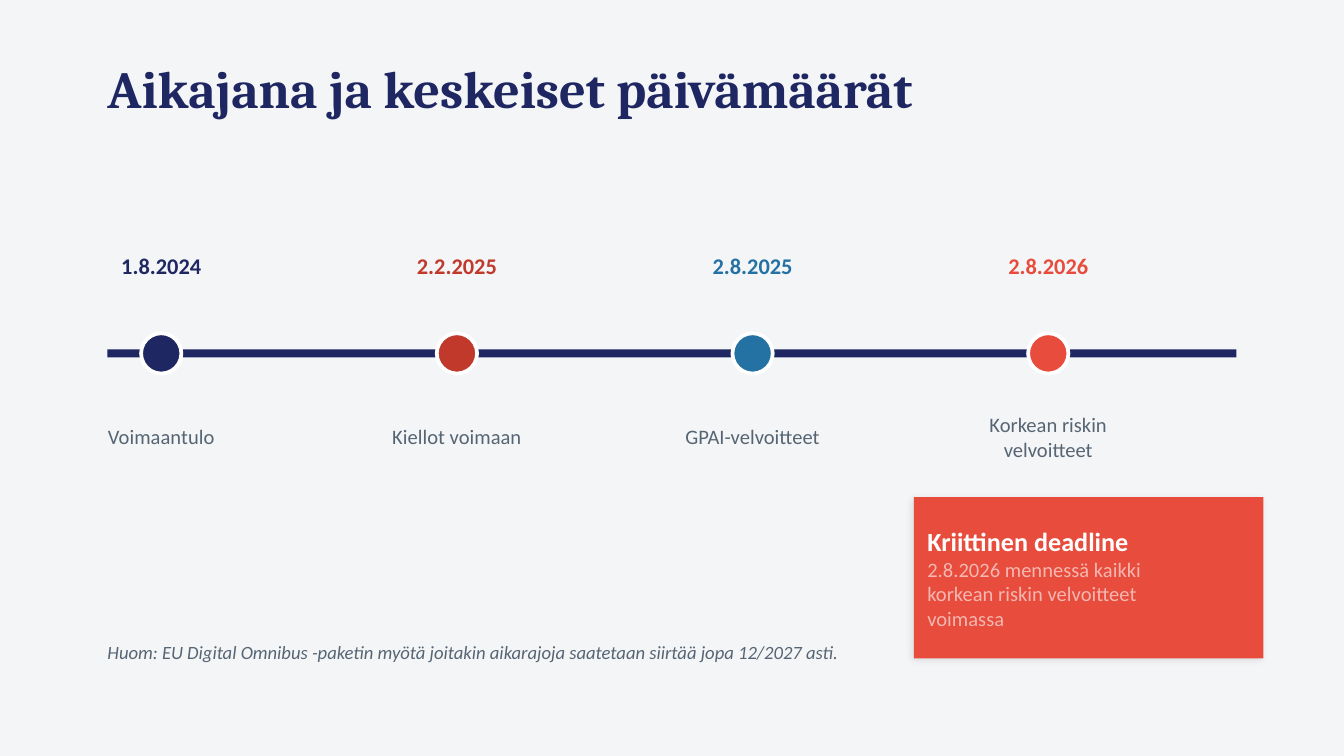
from pptx import Presentation
from pptx.dml.color import RGBColor
from pptx.enum.shapes import MSO_SHAPE
from pptx.enum.text import MSO_ANCHOR, PP_ALIGN
from pptx.oxml import parse_xml
from pptx.oxml.ns import nsdecls
from pptx.util import Inches, Pt

TITLE = "Aikajana ja keskeiset päivämäärät"
MILESTONES = [
    ("1.8.2024", ["Voimaantulo"], "navy"),
    ("2.2.2025", ["Kiellot voimaan"], "crimson"),
    ("2.8.2025", ["GPAI-velvoitteet"], "blue"),
    ("2.8.2026", ["Korkean riskin", "velvoitteet"], "red"),
]
DEADLINE_HEADING = "Kriittinen deadline"
DEADLINE_LINES = ["2.8.2026 mennessä kaikki", "korkean riskin velvoitteet", "voimassa"]
NOTE = ("Huom: EU Digital Omnibus -paketin myötä joitakin aikarajoja "
        "saatetaan siirtää jopa 12/2027 asti.")

THEME = {
    "colors": {
        "background": "F4F5F7", "navy": "1E2761", "crimson": "C0392B", "blue": "2471A3",
        "red": "E74C3C", "gray": "566573", "pink": "F5B7B1", "white": "FFFFFF",
    },
    # font, size, bold, italic
    "styles": {
        "title": ("Cambria", 28, True, False),
        "date": ("Calibri", 12, True, False),
        "body": ("Calibri", 11, False, False),
        "heading": ("Calibri", 14, True, False),
        "note": ("Calibri", 10, False, True),
    },
}

MARGIN = 0.8
FIRST_CENTER, STEP = 1.2, 2.2
LINE_TOP, LINE_HEIGHT = 2.6, 0.06
DOT = 0.3
LABEL_WIDTH = 1.4
CARD = (6.8, 3.7, 2.6, 1.2)
CARD_PADDING = 0.1


def color(name):
    return RGBColor.from_string(THEME["colors"][name])


def add_text(slide, box, lines, align=PP_ALIGN.LEFT):
    """Write one paragraph for each (text, style, color) line."""
    frame = slide.shapes.add_textbox(*map(Inches, box)).text_frame
    frame.word_wrap = True
    frame.vertical_anchor = MSO_ANCHOR.MIDDLE
    frame.margin_left = frame.margin_top = frame.margin_right = frame.margin_bottom = 0
    for index, (text, style, color_name) in enumerate(lines):
        paragraph = frame.paragraphs[0] if index == 0 else frame.add_paragraph()
        paragraph.alignment = align
        run = paragraph.add_run()
        run.text = text
        font = run.font
        font.name, size, font.bold, font.italic = THEME["styles"][style]
        font.size = Pt(size)
        font.color.rgb = color(color_name)


def add_filled(slide, kind, box, fill):
    shape = slide.shapes.add_shape(kind, *map(Inches, box))
    shape.shadow.inherit = False
    shape.fill.solid()
    shape.fill.fore_color.rgb = color(fill)
    shape.line.fill.background()
    return shape


def add_soft_shadow(shape):
    effects = shape._element.spPr.find(
        "{http://schemas.openxmlformats.org/drawingml/2006/main}effectLst")
    effects.append(parse_xml(
        f'<a:outerShdw {nsdecls("a")} blurRad="{Pt(4)}" dist="{Pt(1.5)}" '
        f'dir="{135 * 60000}" algn="bl" rotWithShape="0">'
        '<a:srgbClr val="000000"><a:alpha val="10000"/></a:srgbClr></a:outerShdw>'))


def add_milestone(slide, center, date, label_lines, accent):
    dot_top = LINE_TOP + LINE_HEIGHT / 2 - DOT / 2
    dot = add_filled(slide, MSO_SHAPE.OVAL, (center - DOT / 2, dot_top, DOT, DOT), accent)
    dot.line.color.rgb = color("white")
    dot.line.width = Pt(2)
    left = center - LABEL_WIDTH / 2
    add_text(slide, (left, 1.8, LABEL_WIDTH, 0.35), [(date, "date", accent)], PP_ALIGN.CENTER)
    add_text(slide, (left, 2.95, LABEL_WIDTH, 0.6),
             [(line, "body", "gray") for line in label_lines], PP_ALIGN.CENTER)


def add_deadline_card(slide):
    add_soft_shadow(add_filled(slide, MSO_SHAPE.RECTANGLE, CARD, "red"))
    left, top, width, height = CARD
    inner = (left + CARD_PADDING, top + CARD_PADDING,
             width - 2 * CARD_PADDING, height - 2 * CARD_PADDING)
    add_text(slide, inner, [(DEADLINE_HEADING, "heading", "white")]
             + [(line, "body", "pink") for line in DEADLINE_LINES])


def main():
    deck = Presentation()
    deck.slide_width = Inches(10)
    deck.slide_height = deck.slide_width * 9 // 16
    slide = deck.slides.add_slide(deck.slide_layouts[6])
    slide.background.fill.solid()
    slide.background.fill.fore_color.rgb = color("background")

    add_text(slide, (MARGIN, 0.35, 8, 0.6), [(TITLE, "title", "navy")])
    add_filled(slide, MSO_SHAPE.RECTANGLE,
               (MARGIN, LINE_TOP, 10 - 2 * MARGIN, LINE_HEIGHT), "navy")
    for index, (date, label_lines, accent) in enumerate(MILESTONES):
        add_milestone(slide, FIRST_CENTER + index * STEP, date, label_lines, accent)
    add_deadline_card(slide)
    add_text(slide, (MARGIN, 4.6, 5.5, 0.5), [(NOTE, "note", "gray")])
    deck.save("out.pptx")


if __name__ == "__main__":
    main()
